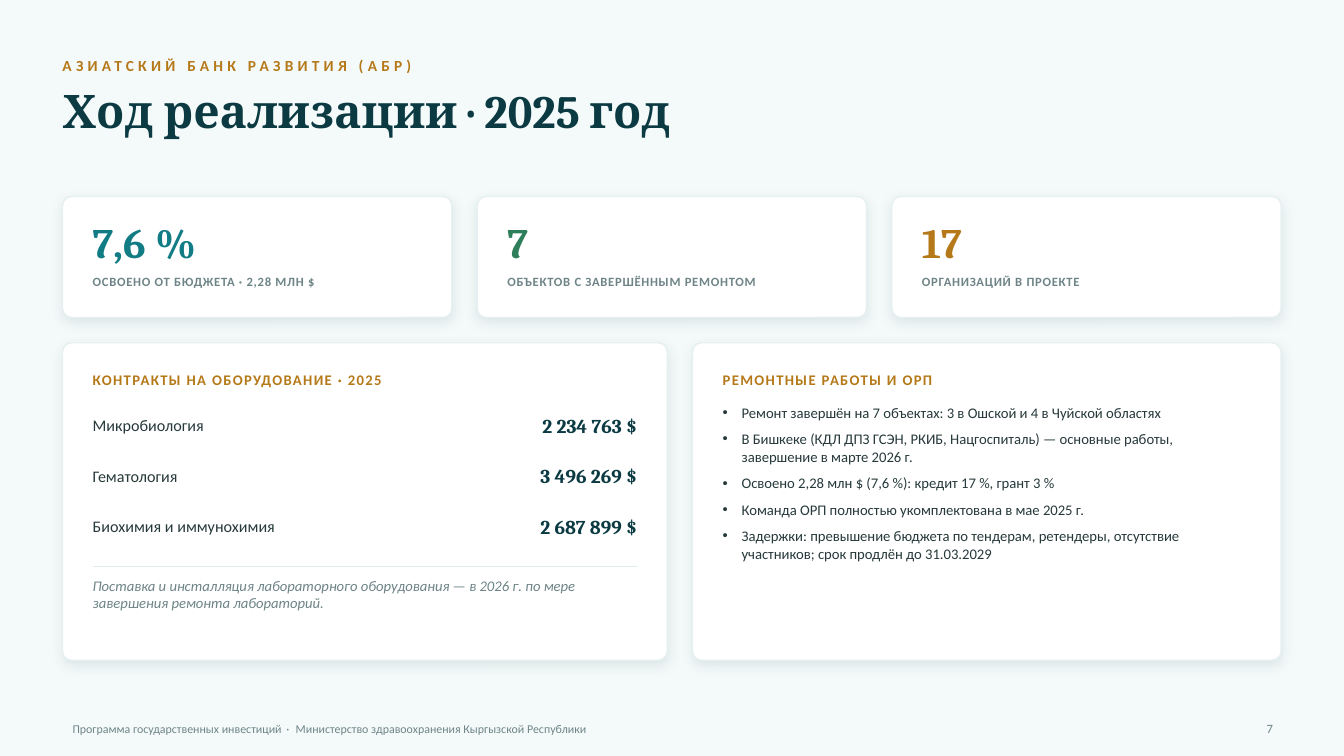
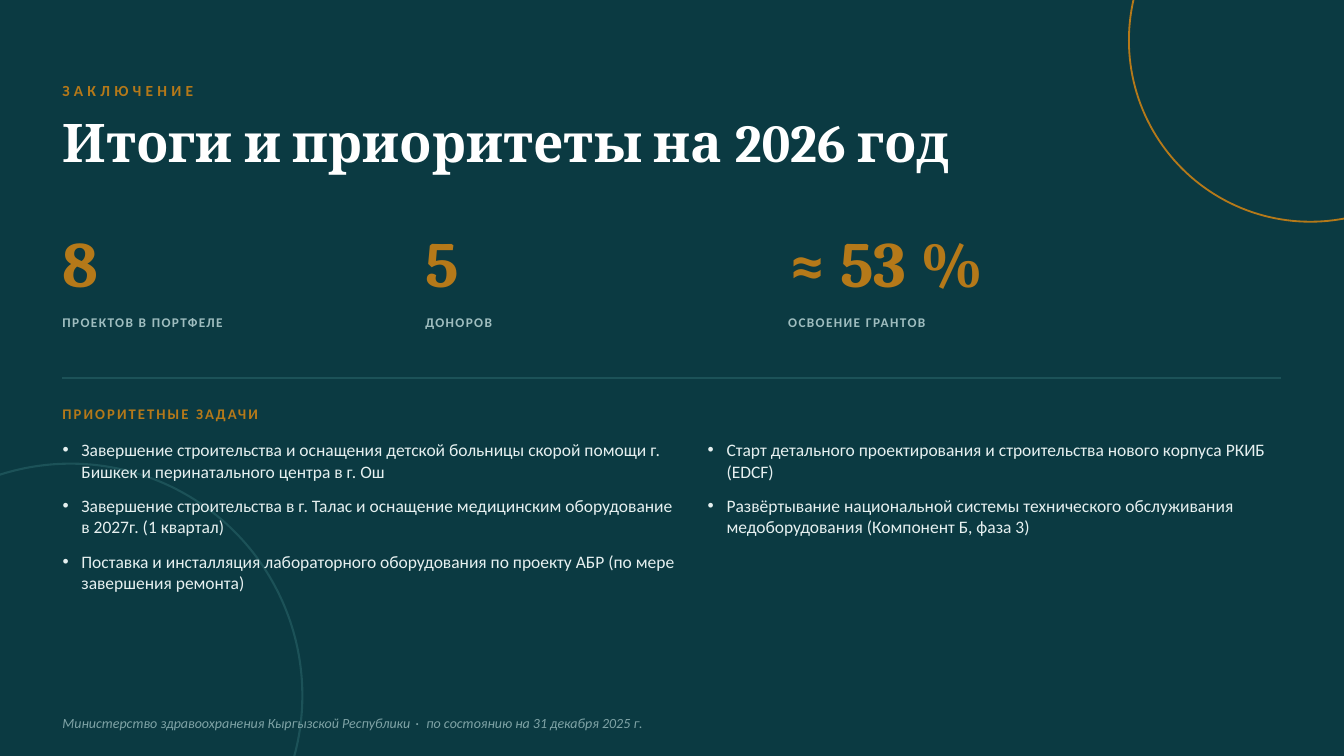
from lxml import etree
from pptx import Presentation
from pptx.dml.color import RGBColor
from pptx.enum import shapes, text
from pptx.oxml.ns import qn
from pptx.util import Pt

COLORS = {
    "mist": "F4FAFA", "petrol": "0B3A42", "white": "FFFFFF", "gold": "B57919",
    "teal": "127C84", "green": "2E7E5B", "ink": "27393B", "grey": "6E8487",
    "border": "E6F0F0", "divider": "E0EBEB", "outline": "1C5258",
    "pale": "9FBDBF", "haze": "7FA3A6",
}
# name: size, font, colour, then optional bold, italic, letter spacing
STYLES = {
    "kicker": dict(size=11, color="gold", bold=True, spacing=3),
    "title": dict(size=33, font="Cambria", color="petrol", bold=True),
    "closing title": dict(size=38, font="Cambria", color="white", bold=True),
    "card value": dict(size=30, font="Cambria", bold=True),
    "card label": dict(size=9, color="grey", bold=True, spacing=0.5),
    "heading": dict(size=10.5, color="gold", bold=True, spacing=1),
    "tasks heading": dict(size=10.5, color="gold", bold=True, spacing=1.5),
    "row": dict(size=11.5, color="ink"),
    "amount": dict(size=14, font="Cambria", color="petrol", bold=True),
    "note": dict(size=10.5, color="grey", italic=True),
    "list": dict(size=10.5, color="ink"),
    "tasks": dict(size=12.5, color="border"),
    "total": dict(size=46, font="Cambria", color="gold", bold=True),
    "total label": dict(size=9.5, color="pale", bold=True, spacing=1),
    "footer": dict(size=8.5, color="grey"),
    "page": dict(size=9, color="grey"),
    "closing footer": dict(size=10, color="haze", italic=True),
}

PROGRESS = {
    "kicker": "АЗИАТСКИЙ БАНК РАЗВИТИЯ (АБР)",
    "title": "Ход реализации · 2025 год",
    "cards": [
        ("7,6 %", "ОСВОЕНО ОТ БЮДЖЕТА · 2,28 МЛН $", "teal"),
        ("7", "ОБЪЕКТОВ С ЗАВЕРШЁННЫМ РЕМОНТОМ", "green"),
        ("17", "ОРГАНИЗАЦИЙ В ПРОЕКТЕ", "gold"),
    ],
    "contracts heading": "КОНТРАКТЫ НА ОБОРУДОВАНИЕ · 2025",
    "contracts": [
        ("Микробиология", "2 234 763 $"),
        ("Гематология", "3 496 269 $"),
        ("Биохимия и иммунохимия", "2 687 899 $"),
    ],
    "note": "Поставка и инсталляция лабораторного оборудования — в 2026 г. "
            "по мере завершения ремонта лабораторий.",
    "works heading": "РЕМОНТНЫЕ РАБОТЫ И ОРП",
    "works": [
        "Ремонт завершён на 7 объектах: 3 в Ошской и 4 в Чуйской областях",
        "В Бишкеке (КДЛ ДПЗ ГСЭН, РКИБ, Нацгоспиталь) — основные работы, "
        "завершение в марте 2026 г.",
        "Освоено 2,28 млн $ (7,6 %): кредит 17 %, грант 3 %",
        "Команда ОРП полностью укомплектована в мае 2025 г.",
        "Задержки: превышение бюджета по тендерам, ретендеры, отсутствие "
        "участников; срок продлён до 31.03.2029",
    ],
    "footer": ("Программа государственных инвестиций",
               "Министерство здравоохранения Кыргызской Республики"),
    "page": "7",
}
CLOSING = {
    "kicker": "ЗАКЛЮЧЕНИЕ",
    "title": "Итоги и приоритеты на 2026 год",
    "totals": [
        ("8", "ПРОЕКТОВ В ПОРТФЕЛЕ"),
        ("5", "ДОНОРОВ"),
        ("≈ 53 %", "ОСВОЕНИЕ ГРАНТОВ"),
    ],
    "tasks heading": "ПРИОРИТЕТНЫЕ ЗАДАЧИ",
    "tasks": [
        ["Завершение строительства и оснащения детской больницы скорой помощи "
         "г. Бишкек и перинатального центра в г. Ош",
         "Завершение строительства в г. Талас и оснащение медицинским "
         "оборудование в 2027г. (1 квартал)",
         "Поставка и инсталляция лабораторного оборудования по проекту АБР "
         "(по мере завершения ремонта)"],
        ["Старт детального проектирования и строительства нового корпуса РКИБ "
         "(EDCF)",
         "Развёртывание национальной системы технического обслуживания "
         "медоборудования (Компонент Б, фаза 3)"],
    ],
    "footer": ("Министерство здравоохранения Кыргызской Республики",
               "по состоянию на 31 декабря 2025 г."),
}

WIDTH, HEIGHT = 960, 540
LEFT, RIGHT = 44.64, 915.12
HEADER_WIDTH = 828
GAP = 18
PADDING = 21.6
CORNER = 6.5
BULLET_INDENT = 13.5
TOP, MIDDLE = text.MSO_ANCHOR.TOP, text.MSO_ANCHOR.MIDDLE


def rgb(name):
    return RGBColor.from_string(COLORS[name])


def style_runs(shape, style, color=None):
    look = STYLES[style]
    for paragraph in shape.text_frame.paragraphs:
        for run in paragraph.runs:
            font = run.font
            font.name = look.get("font", "Calibri")
            font.size = Pt(look["size"])
            font.bold = look.get("bold", False)
            font.italic = look.get("italic", False)
            font.color.rgb = rgb(color or look["color"])
    if "spacing" in look:
        for properties in shape.element.iter(qn("a:rPr")):
            properties.set("spc", str(int(look["spacing"] * 100)))


def fit_frame(shape, anchor):
    frame = shape.text_frame
    frame.word_wrap = True
    frame.auto_size = text.MSO_AUTO_SIZE.NONE
    frame.vertical_anchor = anchor
    frame.margin_left = frame.margin_right = 0
    frame.margin_top = frame.margin_bottom = 0
    return frame


def add_text(slide, words, style, box, anchor=MIDDLE, color=None, right=False):
    shape = slide.shapes.add_textbox(*map(Pt, box))
    frame = fit_frame(shape, anchor)
    frame.text = words
    if right:
        frame.paragraphs[0].alignment = text.PP_ALIGN.RIGHT
    style_runs(shape, style, color)
    return shape


def add_footer(slide, parts, style, box):
    """Two phrases with a dot between them, set wider by letter spacing."""
    shape = add_text(slide, parts[0], style, box)
    for words in (" · ", parts[1]):
        shape.text_frame.paragraphs[0].add_run().text = words
    style_runs(shape, style)
    dot = list(shape.element.iter(qn("a:rPr")))[1]
    dot.set("spc", str(int(STYLES[style]["size"] * 15)))


def place_placeholder(shape, box):
    """Move a placeholder to its box and in front of what is drawn so far."""
    shape.left, shape.top, shape.width, shape.height = map(Pt, box)
    shape.element.getparent().append(shape.element)
    return fit_frame(shape, TOP)


def fill_list(shape, items, style, box, line_spacing, space_after):
    frame = place_placeholder(shape, box)
    frame.text = "\n".join(items)
    for paragraph in frame.paragraphs:
        paragraph.line_spacing = line_spacing
        paragraph.space_before = Pt(0)
        paragraph.space_after = Pt(space_after)
        properties = paragraph._p.get_or_add_pPr()
        properties.set("marL", str(Pt(BULLET_INDENT)))
        properties.set("indent", str(-Pt(BULLET_INDENT)))
        etree.SubElement(properties, qn("a:buChar"), char="•")
    style_runs(shape, style)


def add_line(slide, left, right, y, color):
    line = slide.shapes.add_connector(
        shapes.MSO_CONNECTOR.STRAIGHT, Pt(left), Pt(y), Pt(right), Pt(y))
    line.line.color.rgb = rgb(color)
    line.line.width = Pt(1)
    etree.SubElement(line.element.spPr, qn("a:effectLst"))


def add_card(slide, left, top, width, height):
    card = slide.shapes.add_shape(
        shapes.MSO_SHAPE.ROUNDED_RECTANGLE, *map(Pt, (left, top, width, height)))
    card.adjustments[0] = CORNER / min(width, height)
    card.fill.solid()
    card.fill.fore_color.rgb = rgb("white")
    card.line.color.rgb = rgb("border")
    card.line.width = Pt(1)
    effects = etree.SubElement(card.element.spPr, qn("a:effectLst"))
    shadow = etree.SubElement(
        effects, qn("a:outerShdw"), blurRad=str(Pt(9)), dist=str(Pt(3)),
        dir="5400000", algn="bl", rotWithShape="0")
    tint = etree.SubElement(shadow, qn("a:srgbClr"), val=COLORS["petrol"])
    etree.SubElement(tint, qn("a:alpha"), val="10000")


def add_circle(slide, left, top, size, color, weight):
    circle = slide.shapes.add_shape(
        shapes.MSO_SHAPE.OVAL, Pt(left), Pt(top), Pt(size), Pt(size))
    circle.shadow.inherit = False
    circle.fill.background()
    circle.line.color.rgb = rgb(color)
    circle.line.width = Pt(weight)


def start_slide(presentation, layout, background):
    slide = presentation.slides.add_slide(presentation.slide_layouts[layout])
    slide.background.fill.solid()
    slide.background.fill.fore_color.rgb = rgb(background)
    return slide


def add_header(slide, content, top, title_top, title_style):
    add_text(slide, content["kicker"], "kicker", (LEFT, top, HEADER_WIDTH, 21.6))
    title = slide.shapes.title
    frame = place_placeholder(title, (LEFT, title_top, HEADER_WIDTH, 62))
    frame.text = content["title"]
    frame.paragraphs[0].alignment = text.PP_ALIGN.LEFT
    style_runs(title, title_style)


def build_progress(presentation):
    slide = start_slide(presentation, 1, "mist")
    add_header(slide, PROGRESS, 36, 59, "title")

    cards = PROGRESS["cards"]
    card_width = (RIGHT - LEFT - GAP * (len(cards) - 1)) / len(cards)
    for index, (value, label, color) in enumerate(cards):
        left = LEFT + index * (card_width + GAP)
        inner, inner_width = left + PADDING, card_width - 2 * PADDING
        add_card(slide, left, 140.4, card_width, 86.4)
        add_text(slide, value, "card value", (inner, 152.6, inner_width, 39.6),
                 color=color)
        add_text(slide, label, "card label", (inner, 195.8, inner_width, 25.2),
                 anchor=TOP)

    panel_top, panel_height, contracts_width = 244.8, 226.8, 432
    works_left = LEFT + contracts_width + GAP
    heading_top = panel_top + 15.8

    add_card(slide, LEFT, panel_top, contracts_width, panel_height)
    inner, inner_width = LEFT + PADDING, contracts_width - 2 * PADDING
    inner_right = inner + inner_width
    add_text(slide, PROGRESS["contracts heading"], "heading",
             (inner, heading_top, inner_width, 21.6))
    amount_width = 158.4
    for index, (name, amount) in enumerate(PROGRESS["contracts"]):
        top = 291.6 + index * 36
        add_text(slide, name, "row", (inner, top, 230, 24.5))
        add_text(slide, amount, "amount",
                 (inner_right - amount_width, top, amount_width, 24.5), right=True)
    add_line(slide, inner, inner_right, 404.6, "divider")
    add_text(slide, PROGRESS["note"], "note", (inner, 411.8, inner_width, 50.4),
             anchor=TOP)

    works_width = RIGHT - works_left
    add_card(slide, works_left, panel_top, works_width, panel_height)
    inner, inner_width = works_left + PADDING, works_width - 2 * PADDING
    add_text(slide, PROGRESS["works heading"], "heading",
             (inner, heading_top, inner_width, 21.6))
    fill_list(slide.placeholders[1], PROGRESS["works"], "list",
              (inner, 288, inner_width, 170), 1.02, 6)

    add_footer(slide, PROGRESS["footer"], "footer", (51.84, 509.8, 740, 21.6))
    add_text(slide, PROGRESS["page"], "page", (880, 509.8, 29.4, 21.6), right=True)


def build_closing(presentation):
    slide = start_slide(presentation, 3, "petrol")
    add_circle(slide, -115.2, 331.2, 331.2, "outline", 1.5)
    add_circle(slide, 806.4, -100.8, 259.2, "gold", 1.3)
    add_header(slide, CLOSING, 54, 77.8, "closing title")

    for index, (value, label) in enumerate(CLOSING["totals"]):
        left = LEFT + index * 259.2
        add_text(slide, value, "total", (left, 158.4, 237.6, 57.6))
        add_text(slide, label, "total label", (left, 219.6, 237.6, 21.6))

    add_line(slide, LEFT, RIGHT, 270, "outline")
    add_text(slide, CLOSING["tasks heading"], "tasks heading",
             (LEFT, 284.4, HEADER_WIDTH, 21.6))
    columns = [(LEFT, 439.2), (505.44, 432)]
    for index, (left, width) in enumerate(columns):
        fill_list(slide.placeholders[index + 1], CLOSING["tasks"][index], "tasks",
                  (left, 313.2, width, 180), 1.03, 9)
    add_footer(slide, CLOSING["footer"], "closing footer",
               (LEFT, 504, HEADER_WIDTH, 25.2))


def main():
    presentation = Presentation()
    presentation.slide_width, presentation.slide_height = Pt(WIDTH), Pt(HEIGHT)
    build_progress(presentation)
    build_closing(presentation)
    presentation.save("out.pptx")


if __name__ == "__main__":
    main()
